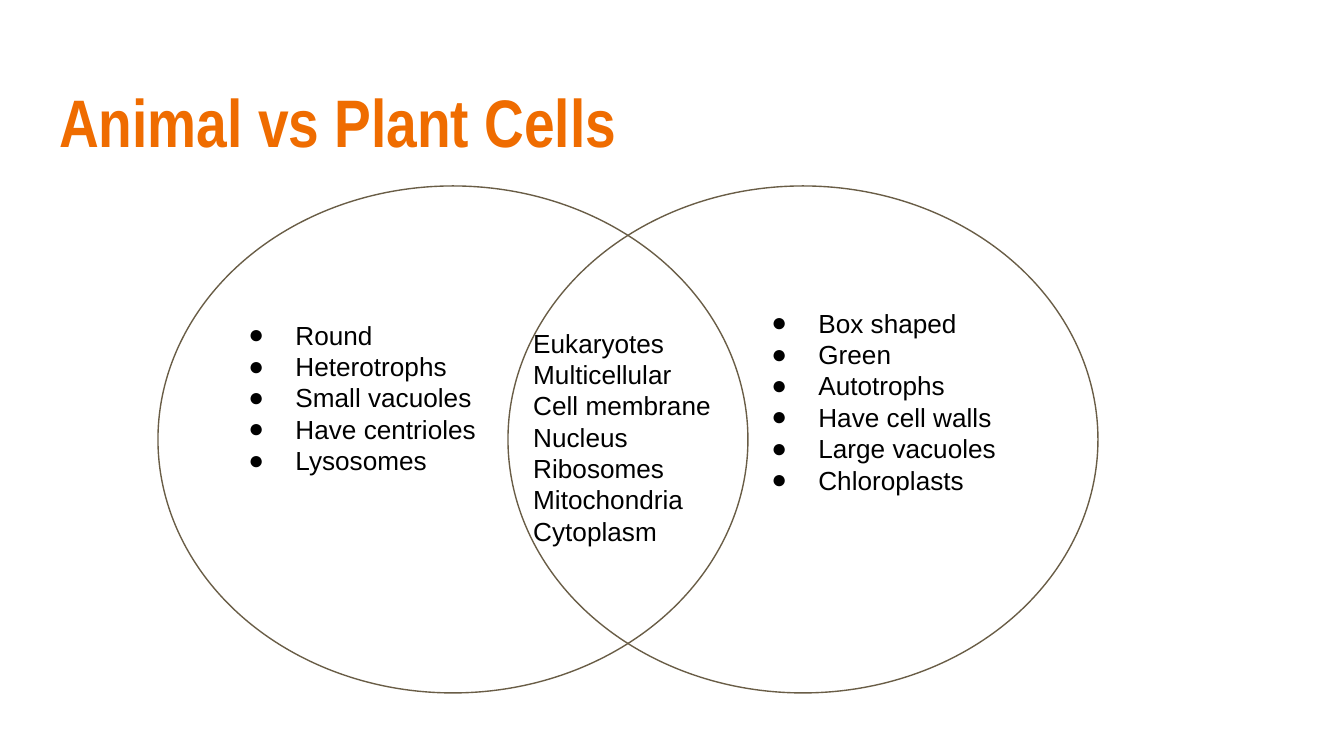
"""Build a Venn diagram slide comparing animal and plant cells."""
from lxml import etree
from pptx import Presentation
from pptx import util as u
from pptx.dml.color import RGBColor
from pptx.enum import shapes, text
from pptx.oxml.ns import qn

ORANGE = RGBColor(0xEF, 0x6C, 0x00)
BROWN = RGBColor(0x69, 0x5D, 0x46)
BLACK = RGBColor(0x00, 0x00, 0x00)

TITLE = "Animal vs Plant Cells"
ANIMAL = ["Round", "Heterotrophs", "Small vacuoles", "Have centrioles", "Lysosomes"]
PLANT = ["Box shaped", "Green", "Autotrophs", "Have cell walls", "Large vacuoles",
         "Chloroplasts"]
SHARED = ["Eukaryotes", "Multicellular", "Cell membrane", "Nucleus", "Ribosomes",
          "Mitochondria", "Cytoplasm"]

PX = 914400 / 134.4
SLIDE_W, SLIDE_H = 1344, 756
INSET, LINE = 14, 31
TITLE_BOX = (46, 66, 1253, 103)
CIRCLE_LEFTS, CIRCLE_TOP, CIRCLE_W, CIRCLE_H = (158, 508), 186, 590, 507
LISTS = [
    (ANIMAL, (215, 243, 293, 403), 2, True),
    (PLANT, (738, 231, 314, 399), 2, True),
    (SHARED, (520, 282, 206, 347), 1, False),
]


def px(n):
    return u.Emu(round(n * PX))


def add_bullet(p):
    pPr = p._p.get_or_add_pPr()
    pPr.set("marL", str(u.Inches(0.5)))
    pPr.set("indent", str(u.Inches(-0.35)))
    color = etree.SubElement(pPr, qn("a:buClr"))
    etree.SubElement(color, qn("a:srgbClr"), val=str(BLACK))
    etree.SubElement(pPr, qn("a:buSzPts"), val="1400")
    etree.SubElement(pPr, qn("a:buFont"), typeface="Arial")
    etree.SubElement(pPr, qn("a:buChar"), char="●")


def add_text(s, lines, box, drop, size, font, color, bold=False, bullets=False):
    tf = s.shapes.add_textbox(*map(px, box)).text_frame
    tf.word_wrap = True
    tf.vertical_anchor = text.MSO_ANCHOR.TOP
    tf.margin_top, tf.margin_bottom = px(INSET + drop), px(INSET)
    for i, line in enumerate(lines):
        p = tf.add_paragraph() if i else tf.paragraphs[0]
        if bullets:
            add_bullet(p)
        r = p.add_run()
        r.text = line
        r.font.size, r.font.name, r.font.bold = u.Pt(size), font, bold
        r.font.color.rgb = color


def add_circle(s, left):
    sp = s.shapes.add_shape(shapes.MSO_SHAPE.OVAL, px(left), px(CIRCLE_TOP),
                            px(CIRCLE_W), px(CIRCLE_H))
    sp.shadow.inherit = False
    sp.fill.background()
    sp.line.color.rgb = BROWN
    sp.line.width = u.Pt(0.75)


def main():
    prs = Presentation()
    prs.slide_width, prs.slide_height = px(SLIDE_W), px(SLIDE_H)
    s = prs.slides.add_slide(prs.slide_layouts[6])
    add_text(s, [TITLE], TITLE_BOX, 0, 36, "Arial Narrow", ORANGE, bold=True)
    for left in CIRCLE_LEFTS:
        add_circle(s, left)
    for lines, box, skipped, bullets in LISTS:
        add_text(s, lines, box, skipped * LINE, 14, "Arial", BLACK, bullets=bullets)
    prs.save("out.pptx")


if __name__ == "__main__":
    main()
